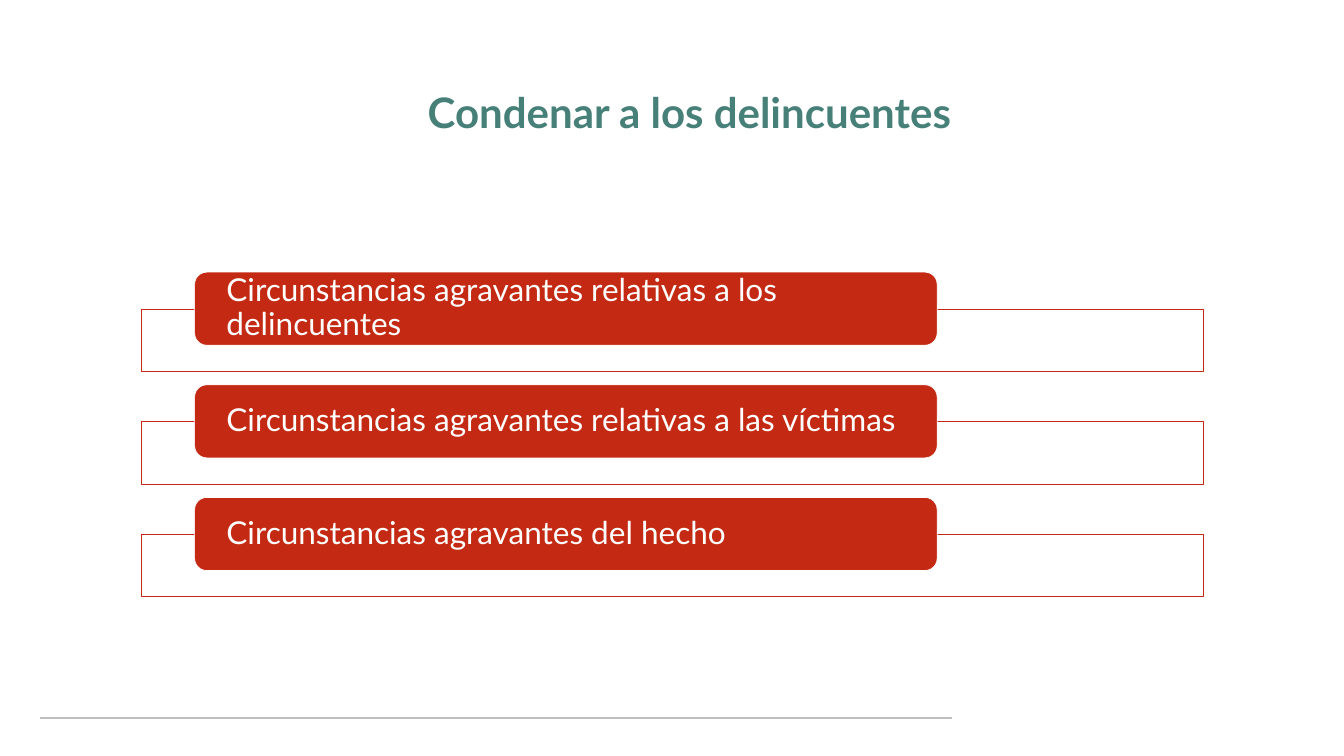
"""Build the slide on aggravating circumstances when sentencing offenders."""
import pptx
import pptx.dml.color
import pptx.enum.shapes
import pptx.enum.text
import pptx.oxml.ns
import pptx.util
from lxml import etree

COLORS = {"title": "468078", "red": "C42A13", "white": "FFFFFF", "rule": "BFBFBF"}
CIRCUMSTANCES = [
    "Circunstancias agravantes relativas a los delincuentes",
    "Circunstancias agravantes relativas a las víctimas",
    "Circunstancias agravantes del hecho",
]
FIRST_ROW, ROW_STEP = 36, 14.9
SHAPES = pptx.enum.shapes.MSO_SHAPE
ALIGN = pptx.enum.text.PP_ALIGN


class Deck:
    """Hold the style and the current slide, measured in percent of its size."""

    font = "Lato"

    def __init__(self, width, height):
        """Start a presentation with one title-only slide."""
        self.prs = pptx.Presentation()
        self.prs.slide_width = pptx.util.Inches(width)
        self.prs.slide_height = pptx.util.Inches(height)
        self.s = self.prs.slides.add_slide(self.prs.slide_layouts[5])

    def x(self, share):
        """Return a horizontal length."""
        return round(self.prs.slide_width * share / 100)

    def y(self, share):
        """Return a vertical length."""
        return round(self.prs.slide_height * share / 100)

    def color(self, name):
        """Return a named colour."""
        return pptx.dml.color.RGBColor.from_string(COLORS[name])

    def line(self, line, color, width):
        """Format an outline or a connector."""
        line.color.rgb = self.color(color)
        line.width = pptx.util.Pt(width)

    def text(self, sp, text, color, align, insets, **font):
        """Write one formatted paragraph into a shape."""
        tf = sp.text_frame
        frame = {
            "word_wrap": True,
            "auto_size": pptx.enum.text.MSO_AUTO_SIZE.NONE,
            "vertical_anchor": pptx.enum.text.MSO_ANCHOR.MIDDLE,
        }
        for side, inset in zip(("left", "top", "right", "bottom"), insets):
            frame[f"margin_{side}"] = pptx.util.Inches(inset)
        for name, value in frame.items():
            setattr(tf, name, value)
        p = tf.paragraphs[0]
        p.alignment, p.line_spacing = align, 0.9
        r = p.add_run()
        r.text = text
        for name, value in {"name": self.font, **font}.items():
            setattr(r.font, name, value)
        r.font.color.rgb = self.color(color)

    def title(self, text, left, top, width, height):
        """Place and format the title placeholder."""
        sp = self.s.shapes.title
        sp.left, sp.top = self.x(left), self.y(top)
        sp.width, sp.height = self.x(width), self.y(height)
        self.text(sp, text, "title", ALIGN.CENTER, (0.2, 0.1, 0.2, 0.1),
                  size=pptx.util.Pt(60), bold=True)

    def box(self, kind, left, top, width, height, fill, outline, opacity=100):
        """Add a filled and outlined shape."""
        sp = self.s.shapes.add_shape(
            kind, self.x(left), self.y(top), self.x(width), self.y(height))
        sp.shadow.inherit = False
        sp.fill.solid()
        sp.fill.fore_color.rgb = self.color(fill)
        if opacity < 100:
            clr = sp.fill._xPr.find(".//" + pptx.oxml.ns.qn("a:srgbClr"))
            etree.SubElement(clr, pptx.oxml.ns.qn("a:alpha"), val=str(opacity * 1000))
        self.line(sp.line, outline, 1)
        return sp

    def rule(self, left, right, top):
        """Add a horizontal rule."""
        c = self.s.shapes.add_connector(
            pptx.enum.shapes.MSO_CONNECTOR.STRAIGHT,
            self.x(left), self.y(top), self.x(right), self.y(top))
        self.line(c.line, "rule", 2.25)
        etree.SubElement(c._element.spPr, pptx.oxml.ns.qn("a:effectLst"))

    def circumstance(self, text, top):
        """Add a labelled bar over its open frame."""
        self.box(SHAPES.RECTANGLE, 10.54, top + 4.87, 78.96, 8.27, "white", "red", 90)
        sp = self.box(SHAPES.ROUNDED_RECTANGLE, 14.48, top, 55.25, 9.67, "red", "white")
        self.text(sp, text, "white", ALIGN.LEFT, (0.56, 0, 0.56, 0),
                  size=pptx.util.Pt(45))


def main():
    """Draw the slide and save it."""
    deck = Deck(26.66, 15)
    deck.rule(3, 70.82, 95)
    deck.title("Condenar a los delincuentes", 4.39, 5.53, 93.81, 19.33)
    for i, text in enumerate(CIRCUMSTANCES):
        deck.circumstance(text, FIRST_ROW + i * ROW_STEP)
    deck.prs.save("out.pptx")


if __name__ == "__main__":
    main()
